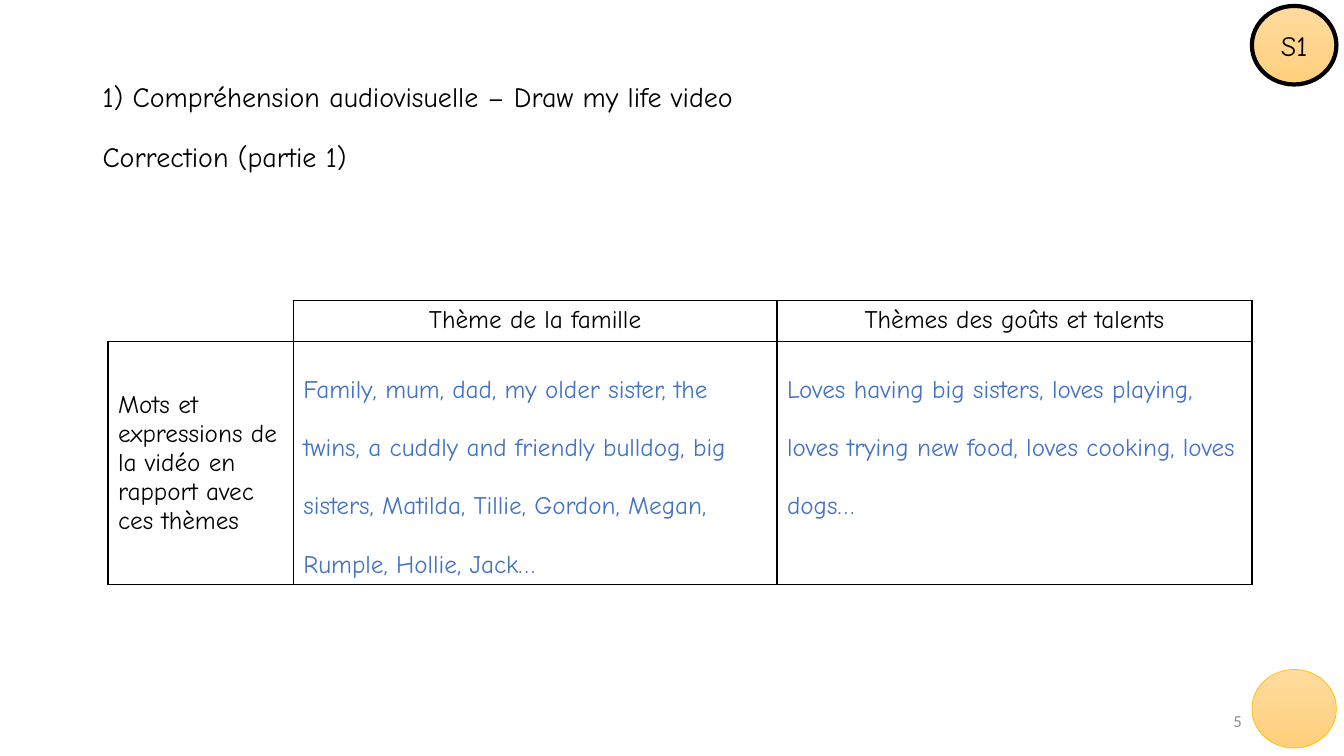
from lxml.etree import SubElement
from pptx import Presentation
from pptx.dml.color import RGBColor
from pptx.enum.shapes import MSO_SHAPE
from pptx.enum.text import MSO_ANCHOR, MSO_AUTO_SIZE, PP_ALIGN
from pptx.oxml.ns import qn
from pptx.util import Cm, Pt

TITLE = ["1) Compréhension audiovisuelle – Draw my life video",
         "Correction (partie 1)"]
ROWS = [
    ["", "Thème de la famille", "Thèmes des goûts et talents"],
    ["Mots et expressions de la vidéo en rapport avec ces thèmes",
     "Family, mum, dad, my older sister, the twins, a cuddly and friendly "
     "bulldog, big sisters, Matilda, Tillie, Gordon, Megan, Rumple, Hollie, Jack…",
     "Loves having big sisters, loves playing, loves trying new food, "
     "loves cooking, loves dogs…"],
]
WIDTHS = [4.67, 12.19, 11.97]
HEIGHTS = [1.04, 6.12]
PAGE = "5"
COLORS = {"ink": "000000", "answer": "4472C4", "page": "8C8C8C",
          "light": "FFDB9E", "dark": "FFD07C", "gold": "FFC000"}
FONT = "Comic Neue"
# top, label, line colour, line width
BADGES = [(0.15, "S1", "ink", 3), (16.87, "", "gold", 0.5)]


def rgb(name):
    return RGBColor.from_string(COLORS[name])


def write(para, text, size, color="ink", font=FONT, align=PP_ALIGN.LEFT):
    para.alignment = align
    run = para.add_run()
    run.text = text
    run.font.size = Pt(size)
    run.font.name = font
    run.font.color.rgb = rgb(color)


def border(cell, bare):
    """Draw the four sides in black, leaving out those in bare."""
    props = cell._tc.get_or_add_tcPr()
    for side in ("lnL", "lnR", "lnT", "lnB"):
        line = SubElement(props, qn("a:" + side), w=str(Pt(1)))
        if side in bare:
            SubElement(line, qn("a:noFill"))
        else:
            fill = SubElement(line, qn("a:solidFill"))
            SubElement(fill, qn("a:srgbClr"), val=COLORS["ink"])


def add_title(slide):
    title = slide.shapes.title
    title.left, title.top, title.width, title.height = (
        Cm(2.33), Cm(1.5), Cm(29.21), Cm(4.39))
    frame = title.text_frame
    frame.auto_size = MSO_AUTO_SIZE.NONE
    frame.vertical_anchor = MSO_ANCHOR.TOP
    frame.margin_top = Cm(0.6)
    for i, text in enumerate(TITLE):
        para = frame.add_paragraph() if i else frame.paragraphs[0]
        para.line_spacing = 0.9
        para.space_before = Pt(21.4 if i else 0)
        write(para, text, 20)


def add_themes(slide):
    table = slide.shapes.add_table(
        len(ROWS), len(WIDTHS), Cm(2.72), Cm(7.57),
        Cm(sum(WIDTHS)), Cm(sum(HEIGHTS))).table
    table.first_row = table.horz_banding = False
    for col, width in zip(table.columns, WIDTHS):
        col.width = Cm(width)
    for r, texts in enumerate(ROWS):
        table.rows[r].height = Cm(HEIGHTS[r])
        for c, text in enumerate(texts):
            cell = table.cell(r, c)
            border(cell, () if r or c else ("lnL", "lnT"))
            cell.fill.background()
            if not text:
                continue
            para = cell.text_frame.paragraphs[0]
            answer = r > 0 and c > 0
            write(para, text, 18, "answer" if answer else "ink",
                  align=PP_ALIGN.LEFT if r else PP_ALIGN.CENTER)
            if answer:
                para.line_spacing = 2.0
            elif r:
                cell.vertical_anchor = MSO_ANCHOR.MIDDLE


def add_page(slide):
    frame = slide.shapes.add_textbox(
        Cm(23.93), Cm(17.65), Cm(7.62), Cm(1.02)).text_frame
    frame.word_wrap = True
    frame.vertical_anchor = MSO_ANCHOR.MIDDLE
    write(frame.paragraphs[0], PAGE, 12, "page", "Calibri", PP_ALIGN.RIGHT)


def add_badge(slide, top, label, color, width):
    badge = slide.shapes.add_shape(
        MSO_SHAPE.OVAL, Cm(31.55), Cm(top), Cm(2.13), Cm(1.98))
    badge.shadow.inherit = False
    badge.fill.gradient()
    badge.fill.gradient_angle = 270
    for stop, shade in zip(badge.fill.gradient_stops, ("light", "dark")):
        stop.color.rgb = rgb(shade)
    badge.line.color.rgb = rgb(color)
    badge.line.width = Pt(width)
    if label:
        frame = badge.text_frame
        frame.vertical_anchor = MSO_ANCHOR.MIDDLE
        write(frame.paragraphs[0], label, 20, align=PP_ALIGN.CENTER)


def main():
    deck = Presentation()
    deck.slide_width, deck.slide_height = Cm(33.87), Cm(19.05)
    slide = deck.slides.add_slide(deck.slide_layouts[5])
    add_title(slide)
    add_themes(slide)
    add_page(slide)
    for badge in BADGES:
        add_badge(slide, *badge)
    deck.save("out.pptx")


if __name__ == "__main__":
    main()
